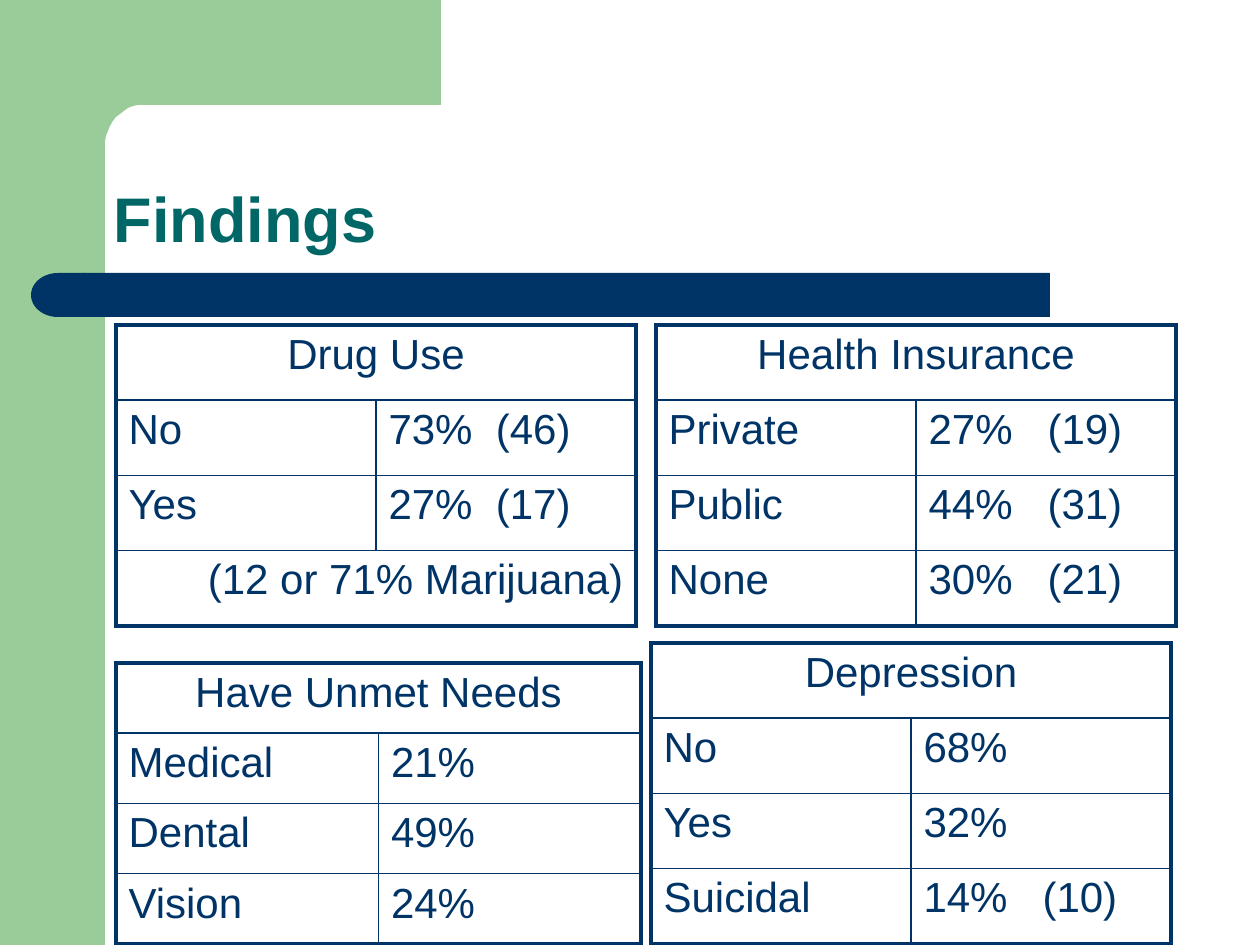
from math import cos, pi, sin

from lxml import etree
from pptx import Presentation
from pptx.dml.color import RGBColor
from pptx.enum.shapes import MSO_SHAPE
from pptx.enum.text import MSO_ANCHOR, PP_ALIGN
from pptx.oxml.ns import qn
from pptx.util import Emu, Pt

GREEN = RGBColor(0x99, 0xCC, 0x99)
NAVY = RGBColor(0x00, 0x33, 0x66)
TEAL = RGBColor(0x00, 0x66, 0x66)
RECTANGLE = MSO_SHAPE.RECTANGLE
DELAY = MSO_SHAPE.FLOWCHART_DELAY
BOTTOM = MSO_ANCHOR.BOTTOM
LEFT, CENTER, RIGHT = PP_ALIGN.LEFT, PP_ALIGN.CENTER, PP_ALIGN.RIGHT
EMU_PER_PX = 914400 / 126
FONT = "Arial"
THIN, THICK = Pt(1), Pt(2.25)

TABLES = [
    ((116, 325, 520, 301), ["Drug Use"], ["No", "73%  (46)"],
     ["Yes", "27%  (17)"], ["(12 or 71% Marijuana)"]),
    ((656, 325, 520, 301), ["Health Insurance"], ["Private", "27%   (19)"],
     ["Public", "44%   (31)"], ["None", "30%   (21)"]),
    ((116, 663, 525, 281), ["Have Unmet Needs"], ["Medical", "21%"],
     ["Dental", "49%"], ["Vision", "24%"]),
    ((651, 643, 520, 301), ["Depression"], ["No", "68%"],
     ["Yes", "32%"], ["Suicidal", "14%   (10)"]),
]


def px(length):
    return Emu(round(length * EMU_PER_PX))


class SlideBuilder:
    """Draws styled elements on the current slide."""

    def __init__(self, slide):
        self.slide = slide

    def paint(self, shape, color):
        shape.shadow.inherit = False
        shape.fill.solid()
        shape.fill.fore_color.rgb = color
        shape.line.fill.background()

    def shape(self, kind, box, color, rotation=0):
        shape = self.slide.shapes.add_shape(kind, *map(px, box))
        shape.rotation = rotation
        self.paint(shape, color)

    def outline(self, points, color):
        builder = self.slide.shapes.build_freeform(*points[0], scale=EMU_PER_PX)
        builder.add_line_segments(points[1:], close=True)
        self.paint(builder.convert_to_shape(), color)

    def format_text(self, paragraph, size, color, bold=False, align=LEFT):
        paragraph.alignment = align
        for run in paragraph.runs:
            run.font.name = FONT
            run.font.size = Pt(size)
            run.font.bold = bold
            run.font.color.rgb = color

    def title(self, text, box):
        text_frame = self.slide.shapes.add_textbox(*map(px, box)).text_frame
        text_frame.word_wrap = True
        text_frame.vertical_anchor = BOTTOM
        text_frame.margin_left = px(9)
        text_frame.text = text
        paragraph = text_frame.paragraphs[0]
        paragraph.line_spacing = 0.9
        self.format_text(paragraph, 36, TEAL, bold=True)

    def borders(self, cell, widths):
        properties = cell._tc.get_or_add_tcPr()
        for side, width in zip("LRTB", widths):
            line = etree.SubElement(properties, qn(f"a:ln{side}"), w=str(width))
            fill = etree.SubElement(line, qn("a:solidFill"))
            etree.SubElement(fill, qn("a:srgbClr"), val=str(NAVY))

    def table(self, box, rows):
        last = len(rows) - 1
        table = self.slide.shapes.add_table(len(rows), 2, *map(px, box)).table
        table.first_row = table.horz_banding = False
        for row, texts in enumerate(rows):
            merged = len(texts) == 1
            if merged:
                table.cell(row, 0).merge(table.cell(row, 1))
            for column in range(2):
                cell = table.cell(row, column)
                self.borders(cell, (
                    THICK if column == 0 else THIN,
                    THICK if column == 1 or merged else THIN,
                    THICK if row == 0 else THIN,
                    THICK if row == last else THIN,
                ))
                cell.fill.background()
            align = LEFT if not merged else CENTER if row == 0 else RIGHT
            for column, text in enumerate(texts):
                text_frame = table.cell(row, column).text_frame
                text_frame.text = text
                self.format_text(text_frame.paragraphs[0], 24, NAVY, align=align)


def main():
    presentation = Presentation()
    presentation.slide_width, presentation.slide_height = px(1260), px(945)
    slide = presentation.slides.add_slide(presentation.slide_layouts[6])
    builder = SlideBuilder(slide)

    builder.shape(RECTANGLE, (0, 0, 105, 945), GREEN)
    angles = [step * pi / 24 for step in range(13)]
    corner = [(143 - 38 * sin(angle), 147 - 42 * cos(angle)) for angle in angles]
    builder.outline([(63, 0), (441, 0), (441, 105), *corner, (105, 161), (63, 161)], GREEN)
    builder.shape(RECTANGLE, (84, 273, 966, 44), NAVY)
    builder.shape(DELAY, (31, 273, 54, 44), NAVY, rotation=180)
    builder.title("Findings", (105, 105, 1092, 157))
    for box, *rows in TABLES:
        builder.table(box, rows)
    presentation.save("out.pptx")


if __name__ == "__main__":
    main()
